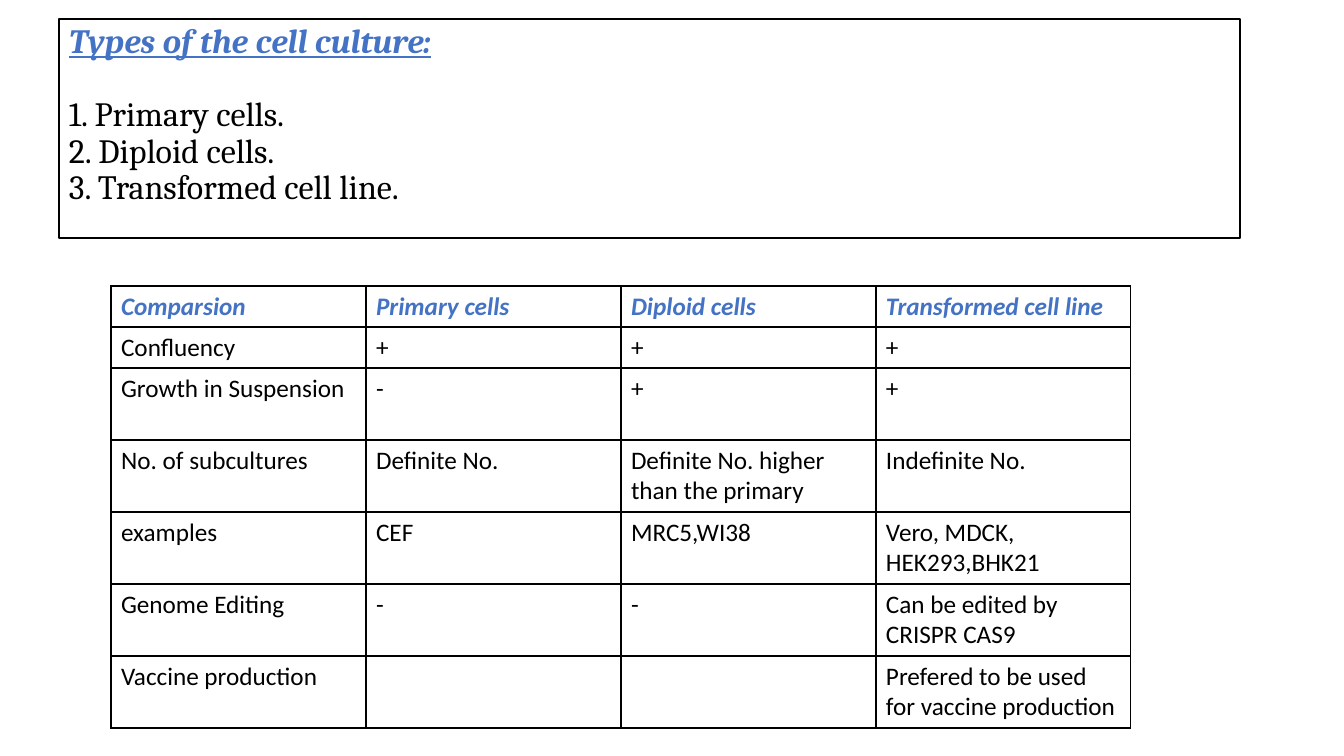
from lxml.etree import SubElement
from pptx import Presentation
from pptx.dml.color import RGBColor
from pptx.enum.shapes import MSO_SHAPE as Shape
from pptx.enum.text import MSO_ANCHOR as Anchor, PP_ALIGN as Align
from pptx.oxml.ns import qn
from pptx.util import Emu, Pt

COLORS = {"paper": "FFFFFF", "ink": "000000", "accent": "4472C4"}
PX = 914400 / 100.8

HEADING = {"size": Pt(24.3), "name": "Cambria", "bold": True, "italic": True, "underline": True}
LISTING = {"size": Pt(24.3), "name": "Cambria"}
HEADER_CELL = {"size": Pt(18), "name": "Calibri", "bold": True, "italic": True}
BODY_CELL = {"size": Pt(18), "name": "Calibri", "bold": False, "italic": False}

CELL_TYPES = ["1. Primary cells.", "2. Diploid cells.", "3. Transformed cell line."]
COMPARISON = [
    ["Comparsion", "Primary cells", "Diploid cells", "Transformed cell line"],
    ["Confluency", "+", "+", "+"],
    ["Growth in Suspension", "-", "+", "+"],
    ["No. of subcultures", "Definite No.", "Definite No. higher than the primary", "Indefinite No."],
    ["examples", "CEF", "MRC5,WI38", "Vero, MDCK, HEK293,BHK21"],
    ["Genome Editing", "-", "-", "Can be edited by CRISPR CAS9"],
    ["Vaccine production", "", "", "Prefered to be used for vaccine production"],
]
SINGLE_LINE, DOUBLE_LINE = 41, 72


def px(length):
    return Emu(round(length * PX))


def color(name):
    return RGBColor.from_string(COLORS[name])


def write(para, text, values, ink):
    span = para.add_run()
    span.text = text
    for name, value in values.items():
        setattr(span.font, name, value)
    span.font.color.rgb = color(ink)


def paint(part):
    part.fill.solid()
    part.fill.fore_color.rgb = color("paper")


def add_borders(cell):
    properties = cell._tc.get_or_add_tcPr()
    for index, side in enumerate(["lnL", "lnR", "lnT", "lnB"]):
        line = properties.makeelement(qn(f"a:{side}"), {"w": str(Pt(1))})
        fill = SubElement(line, qn("a:solidFill"))
        SubElement(fill, qn("a:srgbClr"), val=COLORS["ink"])
        properties.insert(index, line)


def add_types(page, left, top, width, height):
    box = page.shapes.add_shape(Shape.RECTANGLE, px(left), px(top), px(width), px(height))
    box.shadow.inherit = False
    paint(box)
    box.line.color.rgb = color("ink")
    box.line.width = Pt(1)
    frame = box.text_frame
    frame.word_wrap = True
    frame.vertical_anchor = Anchor.TOP
    heading = frame.paragraphs[0]
    heading.space_after = Pt(26)
    write(heading, "Types of the cell culture:", HEADING, "accent")
    for text in CELL_TYPES:
        write(frame.add_paragraph(), text, LISTING, "ink")
    for para in frame.paragraphs:
        para.alignment = Align.LEFT
        para.line_spacing = 0.9


def add_comparison(page, left, top, width):
    heights = [SINGLE_LINE] * 2 + [DOUBLE_LINE] * (len(COMPARISON) - 2)
    columns = len(COMPARISON[0])
    table = page.shapes.add_table(
        len(COMPARISON), columns, px(left), px(top), px(width), px(sum(heights))
    ).table
    table.first_row = False
    table.horz_banding = False
    for column in table.columns:
        column.width = px(width / columns)
    for row, height in zip(table.rows, heights):
        row.height = px(height)
    for row_index, texts in enumerate(COMPARISON):
        values, ink = (BODY_CELL, "ink") if row_index else (HEADER_CELL, "accent")
        for column_index, text in enumerate(texts):
            cell = table.cell(row_index, column_index)
            paint(cell)
            add_borders(cell)
            if text:
                write(cell.text_frame.paragraphs[0], text, values, ink)


def main():
    deck = Presentation()
    deck.slide_width, deck.slide_height = px(1344), px(756)
    page = deck.slides.add_slide(deck.slide_layouts[6])
    add_types(page, 59, 19, 1181, 219)
    add_comparison(page, 111, 286, 1020)
    deck.save("out.pptx")


if __name__ == "__main__":
    main()
